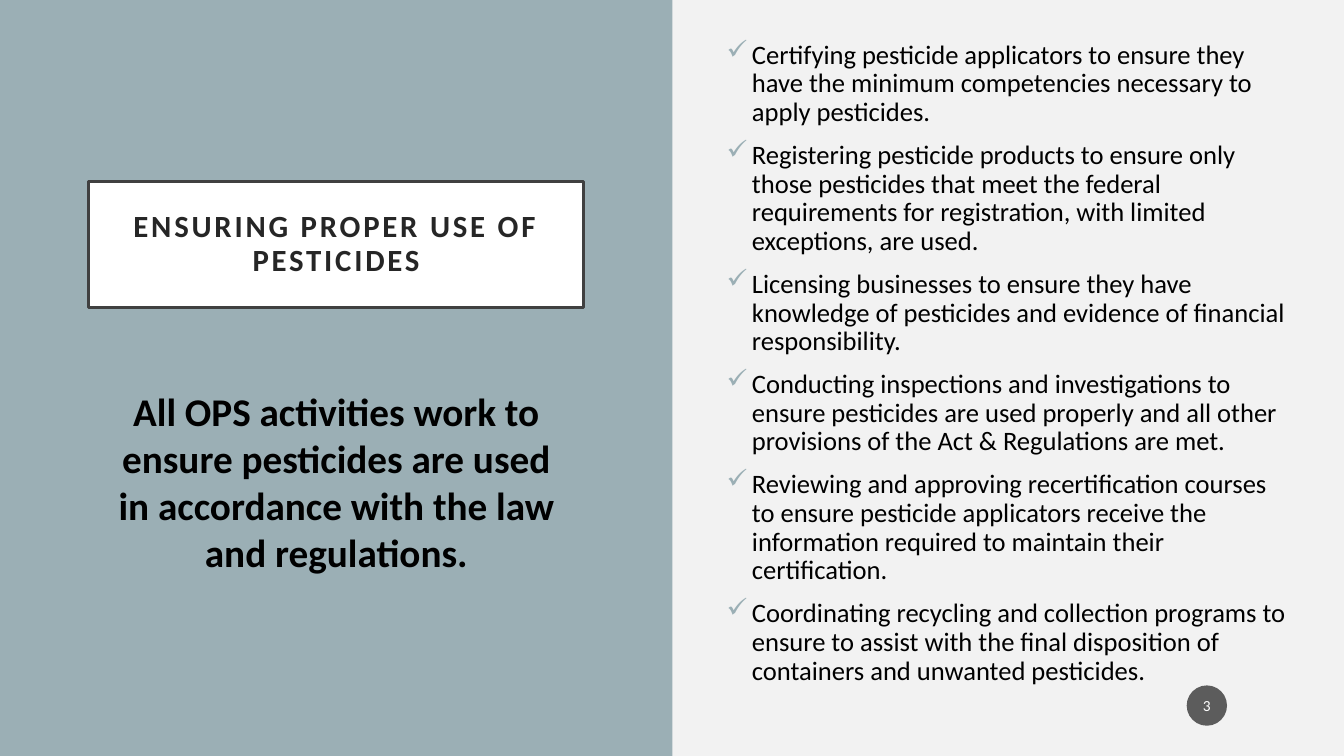
from lxml.etree import SubElement
from pptx import Presentation
from pptx.dml.color import RGBColor
from pptx.enum.shapes import MSO_SHAPE
from pptx.enum.text import MSO_ANCHOR, MSO_AUTO_SIZE, PP_ALIGN
from pptx.oxml.ns import qn
from pptx.util import Inches, Pt

SAGE, BLACK, WHITE = "9BAFB5", "000000", "FFFFFF"
TITLE = "ENSURING PROPER USE OF PESTICIDES"
CLAIM = ("All OPS activities work to ensure pesticides are used "
         "in accordance with the law and regulations.")
DUTIES = [
    "Certifying pesticide applicators to ensure they have the minimum "
    "competencies necessary to apply pesticides.",
    "Registering pesticide products to ensure only those pesticides that meet "
    "the federal requirements for registration, with limited exceptions, are used.",
    "Licensing businesses to ensure they have knowledge of pesticides and "
    "evidence of financial responsibility.",
    "Conducting inspections and investigations to ensure pesticides are used "
    "properly and all other provisions of the Act & Regulations are met.",
    "Reviewing and approving recertification courses to ensure pesticide "
    "applicators receive the information required to maintain their certification.",
    "Coordinating recycling and collection programs to ensure to assist with "
    "the final disposition of containers and unwanted pesticides.",
]


def paint(color, value):
    """Set a color format from a hex string."""
    color.rgb = RGBColor.from_string(value)


def fill(shape, value):
    """Give a shape a solid fill."""
    shape.fill.solid()
    paint(shape.fill.fore_color, value)


def write(para, text, size, color, bold=False):
    """Add one styled run and return it."""
    run = para.add_run()
    run.text = text
    run.font.name = "Calibri"
    run.font.size = Pt(size)
    run.font.bold = bold
    paint(run.font.color, color)
    return run


def inset(frame, side, edge):
    """Set the side and the top and bottom margins of a frame."""
    frame.margin_left = frame.margin_right = Inches(side)
    frame.margin_top = frame.margin_bottom = Inches(edge)


def add_solid(slide, kind, box, color):
    """Add a flat shape with no outline."""
    shape = slide.shapes.add_shape(kind, *map(Inches, box))
    shape.shadow.inherit = False
    shape.line.fill.background()
    fill(shape, color)
    return shape


def add_text(slide, box):
    """Add a wrapping text box and return its frame."""
    frame = slide.shapes.add_textbox(*map(Inches, box)).text_frame
    frame.word_wrap = True
    return frame


def check(para):
    """Give a paragraph a hanging check mark."""
    props = para._p.get_or_add_pPr()
    props.set("marL", str(Inches(0.25)))
    props.set("indent", str(-Inches(0.25)))
    tint = SubElement(props, qn("a:buClr"))
    SubElement(tint, qn("a:srgbClr")).set("val", SAGE)
    SubElement(props, qn("a:buChar")).set("char", "✓")


def add_title(slide, box):
    """Place the framed title."""
    title = slide.shapes.title
    title.left, title.top, title.width, title.height = map(Inches, box)
    fill(title, WHITE)
    paint(title.line.color, "404040")
    title.line.width = Pt(2.5)
    frame = title.text_frame
    frame.auto_size = MSO_AUTO_SIZE.NONE
    frame.vertical_anchor = MSO_ANCHOR.MIDDLE
    inset(frame, 0.2, 0.2)
    para = frame.paragraphs[0]
    para.alignment = PP_ALIGN.CENTER
    para.line_spacing = 0.9
    run = write(para, TITLE, 22, "262626", True)
    run.font._element.set("spc", "200")


def add_left(slide, box):
    """Build the colored panel with the title and the claim."""
    left, top, width, height = box
    panel = add_solid(slide, MSO_SHAPE.RECTANGLE, box, SAGE)
    slide.shapes._spTree.insert(2, panel._element)
    add_title(slide, (left + 0.88, top + 1.8, width - 1.76, 1.25))
    frame = add_text(slide, (left + 1.01, top + 3.79, width - 2.02, 2.74))
    para = frame.paragraphs[0]
    para.alignment = PP_ALIGN.CENTER
    write(para, CLAIM, 28, BLACK, True)


def add_duties(slide, box):
    """Build the check list."""
    frame = add_text(slide, box)
    for i, duty in enumerate(DUTIES):
        para = frame.add_paragraph() if i else frame.paragraphs[0]
        check(para)
        para.line_spacing = 0.9
        para.space_before = Pt(10 if i else 0)
        write(para, duty, 19, BLACK)


def add_badge(slide, box):
    """Build the round page number."""
    badge = add_solid(slide, MSO_SHAPE.OVAL, box, "1D1D1D")
    tone = badge._element.spPr.find(qn("a:solidFill"))[0]
    SubElement(tone, qn("a:alpha")).set("val", "70000")
    frame = badge.text_frame
    frame.vertical_anchor = MSO_ANCHOR.MIDDLE
    inset(frame, 0.02, 0.05)
    para = frame.paragraphs[0]
    para.alignment = PP_ALIGN.CENTER
    write(para, "3", 11, WHITE)


def main():
    """Build and save the slide."""
    deck = Presentation()
    deck.slide_width, deck.slide_height = Inches(13.33), Inches(7.5)
    slide = deck.slides.add_slide(deck.slide_layouts[5])
    fill(slide.background, "F2F2F2")
    add_left(slide, (0, 0, 6.67, 7.5))
    add_duties(slide, (7.11, 0.36, 5.77, 6.64))
    add_badge(slide, (11.77, 6.8, 0.4, 0.4))
    deck.save("out.pptx")


if __name__ == "__main__":
    main()
